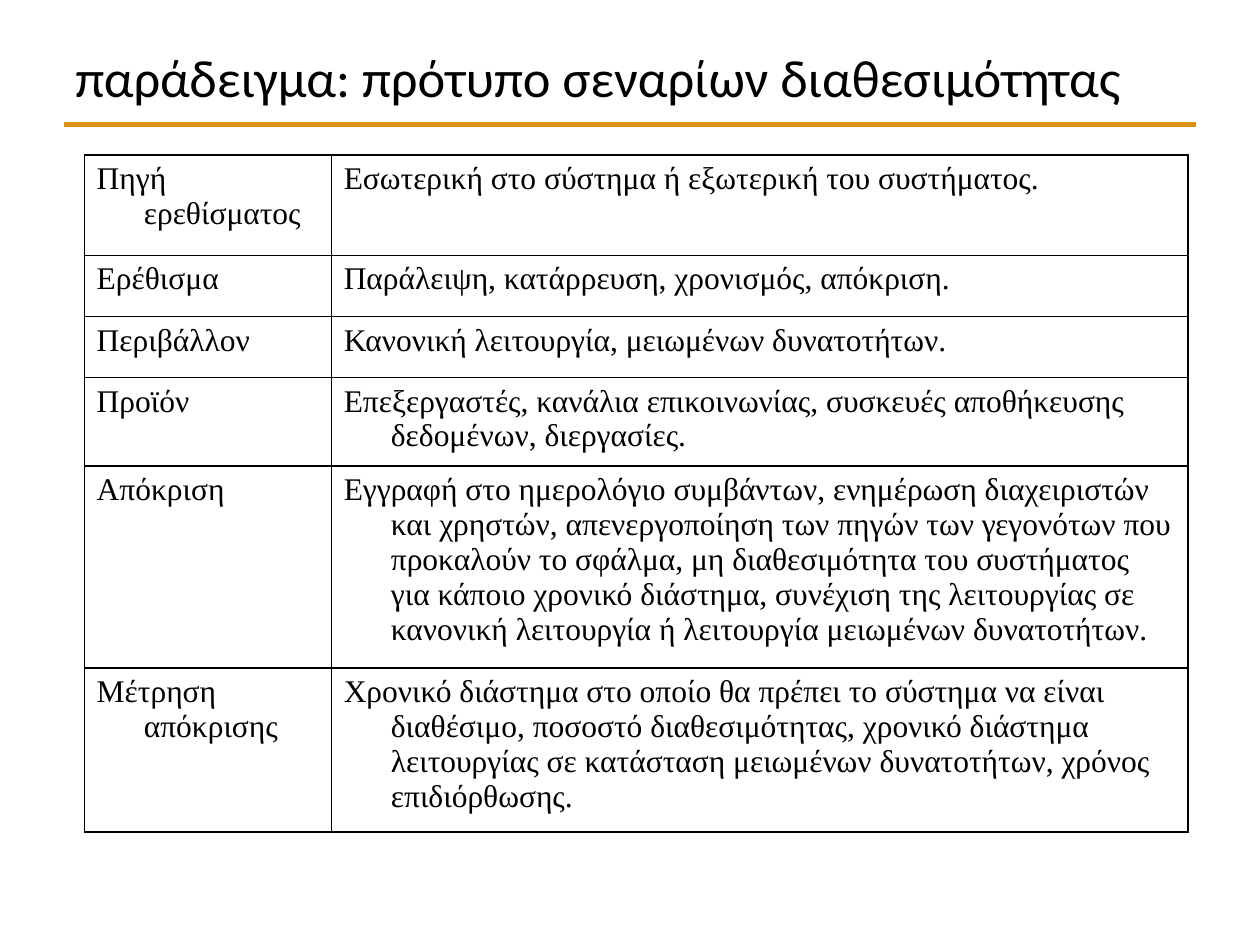
from lxml import etree
from pptx import Presentation
from pptx.dml.color import RGBColor
from pptx.enum.shapes import MSO_CONNECTOR
from pptx.enum.text import MSO_ANCHOR, PP_ALIGN
from pptx.oxml.ns import qn
from pptx.util import Cm, Pt

STRAIGHT = MSO_CONNECTOR.STRAIGHT
MIDDLE = MSO_ANCHOR.MIDDLE
TOP = MSO_ANCHOR.TOP
LEFT = PP_ALIGN.LEFT

BLACK = RGBColor(0x00, 0x00, 0x00)
ORANGE = RGBColor(0xDC, 0x90, 0x16)

TITLE = "παράδειγμα: πρότυπο σεναρίων διαθεσιμότητας"
# Scenario part, its possible values, row height in cm
SCENARIO = [
    ("Πηγή ερεθίσματος", "Εσωτερική στο σύστημα ή εξωτερική του συστήματος.", 2.03),
    ("Ερέθισμα", "Παράλειψη, κατάρρευση, χρονισμός, απόκριση.", 1.23),
    ("Περιβάλλον", "Κανονική λειτουργία, μειωμένων δυνατοτήτων.", 1.23),
    ("Προϊόν",
     "Επεξεργαστές, κανάλια επικοινωνίας, συσκευές αποθήκευσης δεδομένων, "
     "διεργασίες.", 1.78),
    ("Απόκριση",
     "Εγγραφή στο ημερολόγιο συμβάντων, ενημέρωση διαχειριστών και χρηστών, "
     "απενεργοποίηση των πηγών των γεγονότων που προκαλούν το σφάλμα, "
     "μη διαθεσιμότητα του συστήματος για κάποιο χρονικό διάστημα, "
     "συνέχιση της λειτουργίας σε κανονική λειτουργία ή λειτουργία "
     "μειωμένων δυνατοτήτων.", 4.06),
    ("Μέτρηση απόκρισης",
     "Χρονικό διάστημα στο οποίο θα πρέπει το σύστημα να είναι διαθέσιμο, "
     "ποσοστό διαθεσιμότητας, χρονικό διάστημα λειτουργίας σε κατάσταση "
     "μειωμένων δυνατοτήτων, χρόνος επιδιόρθωσης.", 3.3),
]
COLUMN_WIDTHS = (4.98, 17.27)
HANGING_INDENT = Cm(0.95)


def write(paragraph, text, font_name, size):
    paragraph.alignment = LEFT
    run = paragraph.add_run()
    run.text = text
    run.font.name = font_name
    run.font.size = Pt(size)
    run.font.color.rgb = BLACK


def add_borders(cell):
    """Draw a thin black line on all four sides of the cell."""
    properties = cell._tc.get_or_add_tcPr()
    for position, side in enumerate(("a:lnL", "a:lnR", "a:lnT", "a:lnB")):
        line = etree.Element(qn(side), w=str(Pt(1)))
        fill = etree.SubElement(line, qn("a:solidFill"))
        etree.SubElement(fill, qn("a:srgbClr"), val=str(BLACK))
        properties.insert(position, line)


def fill_cell(cell, text):
    cell.fill.background()
    add_borders(cell)
    cell.vertical_anchor = TOP
    cell.margin_left = cell.margin_right = Cm(0.25)
    cell.margin_top = cell.margin_bottom = Cm(0.13)
    paragraph = cell.text_frame.paragraphs[0]
    write(paragraph, text, "Times New Roman", 18)
    paragraph_properties = paragraph._p.get_or_add_pPr()
    paragraph_properties.set("marL", str(HANGING_INDENT))
    paragraph_properties.set("indent", str(-HANGING_INDENT))


def add_title(slide):
    rule = slide.shapes.add_connector(STRAIGHT, Cm(1.3), Cm(2.51), Cm(24.1), Cm(2.51))
    rule.line.color.rgb = ORANGE
    rule.line.width = Pt(2.5)
    etree.SubElement(rule._element.spPr, qn("a:effectLst"))

    title = slide.shapes.add_textbox(Cm(1.27), Cm(0.76), Cm(22.86), Cm(1.55))
    title.text_frame.word_wrap = True
    title.text_frame.vertical_anchor = MIDDLE
    write(title.text_frame.paragraphs[0], TITLE, "Calibri", 30)


def add_scenario_table(slide):
    height = sum(row_height for _, _, row_height in SCENARIO)
    table = slide.shapes.add_table(
        len(SCENARIO), len(COLUMN_WIDTHS),
        Cm(1.7), Cm(3.12), Cm(sum(COLUMN_WIDTHS)), Cm(height)).table
    table.first_row = False
    table.horz_banding = False
    for column, width in zip(table.columns, COLUMN_WIDTHS):
        column.width = Cm(width)
    for row, (part, values, row_height) in zip(table.rows, SCENARIO):
        row.height = Cm(row_height)
        for cell, text in zip(row.cells, (part, values)):
            fill_cell(cell, text)


def main():
    presentation = Presentation()
    presentation.slide_width = Cm(25.4)
    presentation.slide_height = Cm(19.05)
    slide = presentation.slides.add_slide(presentation.slide_layouts[6])
    add_title(slide)
    add_scenario_table(slide)
    presentation.save("out.pptx")


if __name__ == "__main__":
    main()
